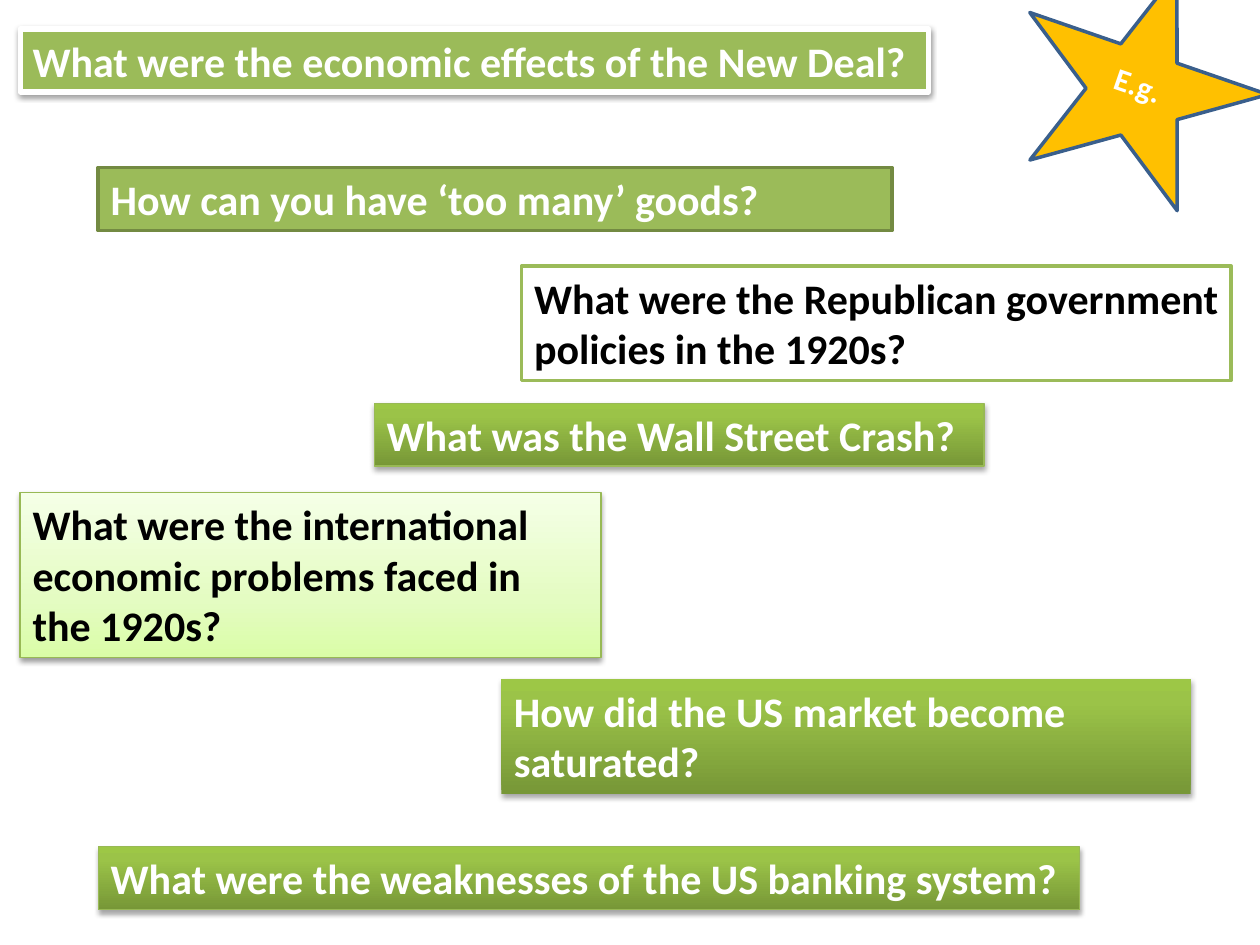
"""Build a slide of question boxes about the 1920s US economy, with an example star."""
from lxml import etree
from pptx import Presentation
from pptx import util as u
from pptx.dml.color import RGBColor
from pptx.enum import shapes, text
from pptx.oxml.ns import qn

WHITE = RGBColor(0xFF, 0xFF, 0xFF)
BLACK = RGBColor(0, 0, 0)
GREEN = RGBColor(0x9B, 0xBB, 0x59)
DARK_GREEN = RGBColor(0x73, 0x8A, 0x42)
EDGE_GREEN = RGBColor(0x98, 0xB9, 0x55)
GOLD = RGBColor(0xFF, 0xC0, 0x00)
NAVY = RGBColor(0x3A, 0x5F, 0x8C)
DEEP = [(0, RGBColor(0x77, 0x97, 0x37)), (80, RGBColor(0x9B, 0xC3, 0x48)),
        (100, RGBColor(0x9D, 0xC7, 0x46))]
PALE = [(0, RGBColor(0xDA, 0xFD, 0xA7)), (35, RGBColor(0xE4, 0xFC, 0xC2)),
        (100, RGBColor(0xF5, 0xFF, 0xE7))]

SOFT = (38, 1.6)
STRONG = (35, 1.8)
STYLES = {
    "framed": dict(fill=GREEN, line=(WHITE, 3), ink=WHITE, shadow=SOFT),
    "flat": dict(fill=GREEN, line=(DARK_GREEN, 2), ink=WHITE),
    "outlined": dict(fill=WHITE, line=(GREEN, 2), ink=BLACK),
    "deep": dict(fill=DEEP, line=(EDGE_GREEN, 0.75), ink=WHITE, shadow=STRONG),
    "deep borderless": dict(fill=DEEP, ink=WHITE, shadow=STRONG),
    "pale": dict(fill=PALE, line=(EDGE_GREEN, 0.75), ink=BLACK, shadow=SOFT),
}
QUESTIONS = [
    ("What were the economic effects of the New Deal?", "framed", (0.16, 0.23, 7.21, 0.5), False),
    ("What was the Wall Street Crash?", "deep", (2.97, 3.2, 4.84, 0.5), True),
    ("What were the weaknesses of the US banking system?", "deep", (0.78, 6.72, 7.79, 0.5), False),
    ("What were the international economic problems faced in the 1920s?", "pale",
     (0.16, 3.91, 4.61, 1.31), True),
    ("How can you have ‘too many’ goods?", "flat", (0.78, 1.33, 6.3, 0.5), True),
    ("What were the Republican government policies in the 1920s?", "outlined",
     (4.14, 2.11, 5.63, 0.91), True),
    ("How did the US market become saturated?", "deep borderless", (3.98, 5.39, 5.47, 0.91), True),
]
STAR_PLACE = (8.05, -0.27, 2, 1.79)
LABEL_PLACE = (8.74, 0.47, 0.58, 0.41)
STAR_TILT = 19


def paint_gradient(fill, stops):
    fill.gradient()
    fill.gradient_angle = 90
    stop_list = fill._xPr.find(qn("a:gradFill")).find(qn("a:gsLst"))
    for old_stop in list(stop_list):
        stop_list.remove(old_stop)
    for percent, color in stops:
        stop = etree.SubElement(stop_list, qn("a:gs"), pos=str(percent * 1000))
        etree.SubElement(stop, qn("a:srgbClr"), val=str(color))


def cast_shadow(shape, opacity, distance):
    effects = shape._element.spPr.find(qn("a:effectLst"))
    shadow = etree.SubElement(effects, qn("a:outerShdw"), blurRad=str(u.Pt(3.1)),
                              dist=str(u.Pt(distance)), dir="5400000", rotWithShape="0")
    color = etree.SubElement(shadow, qn("a:srgbClr"), val="000000")
    etree.SubElement(color, qn("a:alpha"), val=str(opacity * 1000))


def add_panel(slide, kind, place, fill, line=None, shadow=None):
    panel = slide.shapes.add_shape(kind, *map(u.Inches, place))
    panel.shadow.inherit = False
    if isinstance(fill, list):
        paint_gradient(panel.fill, fill)
    else:
        panel.fill.solid()
        panel.fill.fore_color.rgb = fill
    if line:
        panel.line.color.rgb, panel.line.width = line[0], u.Pt(line[1])
    else:
        panel.line.fill.background()
    if shadow:
        cast_shadow(panel, *shadow)
    return panel


def write(panel, words, size, ink, align, wrap=True):
    frame = panel.text_frame
    frame.text = words
    frame.word_wrap = wrap
    frame.auto_size = text.MSO_AUTO_SIZE.SHAPE_TO_FIT_TEXT
    frame.vertical_anchor = text.MSO_ANCHOR.TOP
    paragraph = frame.paragraphs[0]
    paragraph.alignment = align
    font = paragraph.runs[0].font
    font.name, font.size, font.bold = "Calibri", u.Pt(size), True
    font.color.rgb = ink


def main():
    deck = Presentation()
    deck.slide_width, deck.slide_height = u.Inches(10), u.Inches(7.5)
    slide = deck.slides.add_slide(deck.slide_layouts[6])
    rectangle = shapes.MSO_SHAPE.RECTANGLE

    for words, style_name, place, wrap in QUESTIONS:
        style = dict(STYLES[style_name])
        ink = style.pop("ink")
        question = add_panel(slide, rectangle, place, **style)
        write(question, words, 24, ink, text.PP_ALIGN.LEFT, wrap)

    star = add_panel(slide, shapes.MSO_SHAPE.STAR_5_POINT, STAR_PLACE, GOLD, (NAVY, 2))
    label = add_panel(slide, rectangle, LABEL_PLACE, GOLD)
    write(label, "E.g.", 18, WHITE, text.PP_ALIGN.RIGHT)
    star.rotation = label.rotation = STAR_TILT

    deck.save("out.pptx")


if __name__ == "__main__":
    main()
